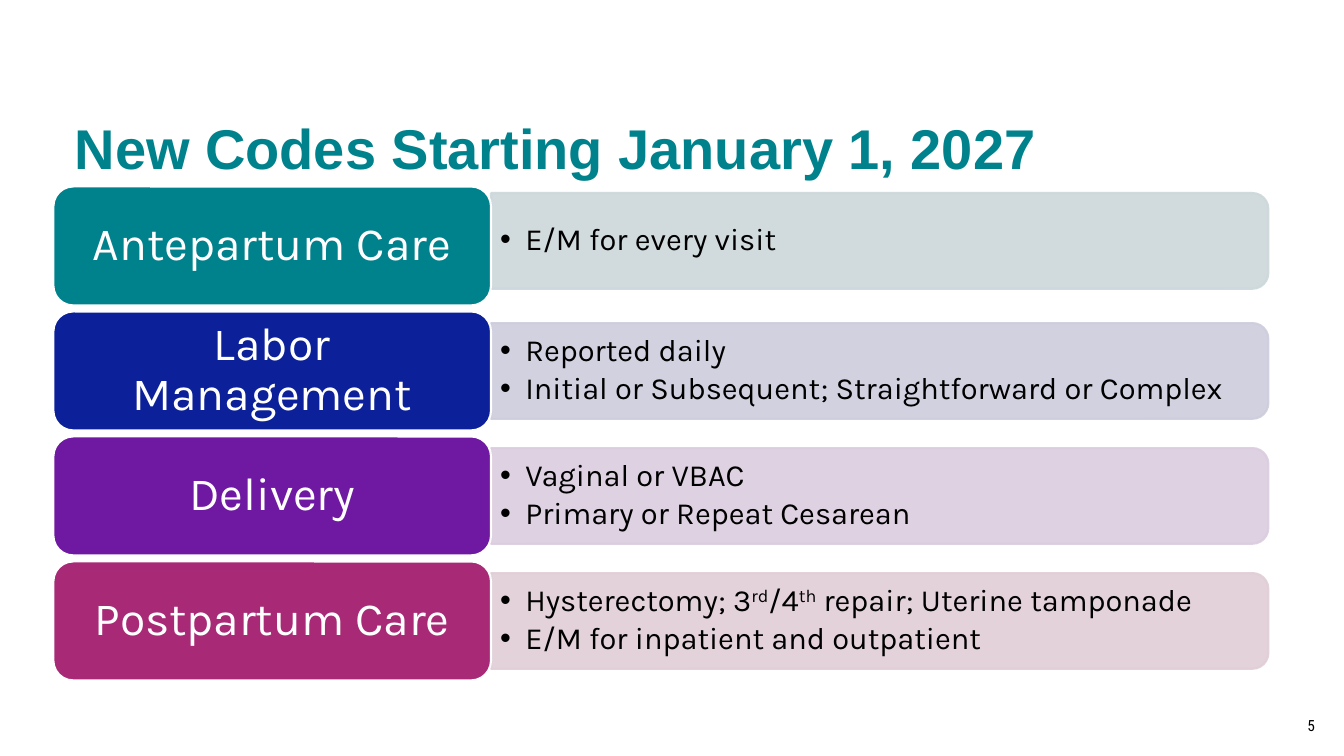
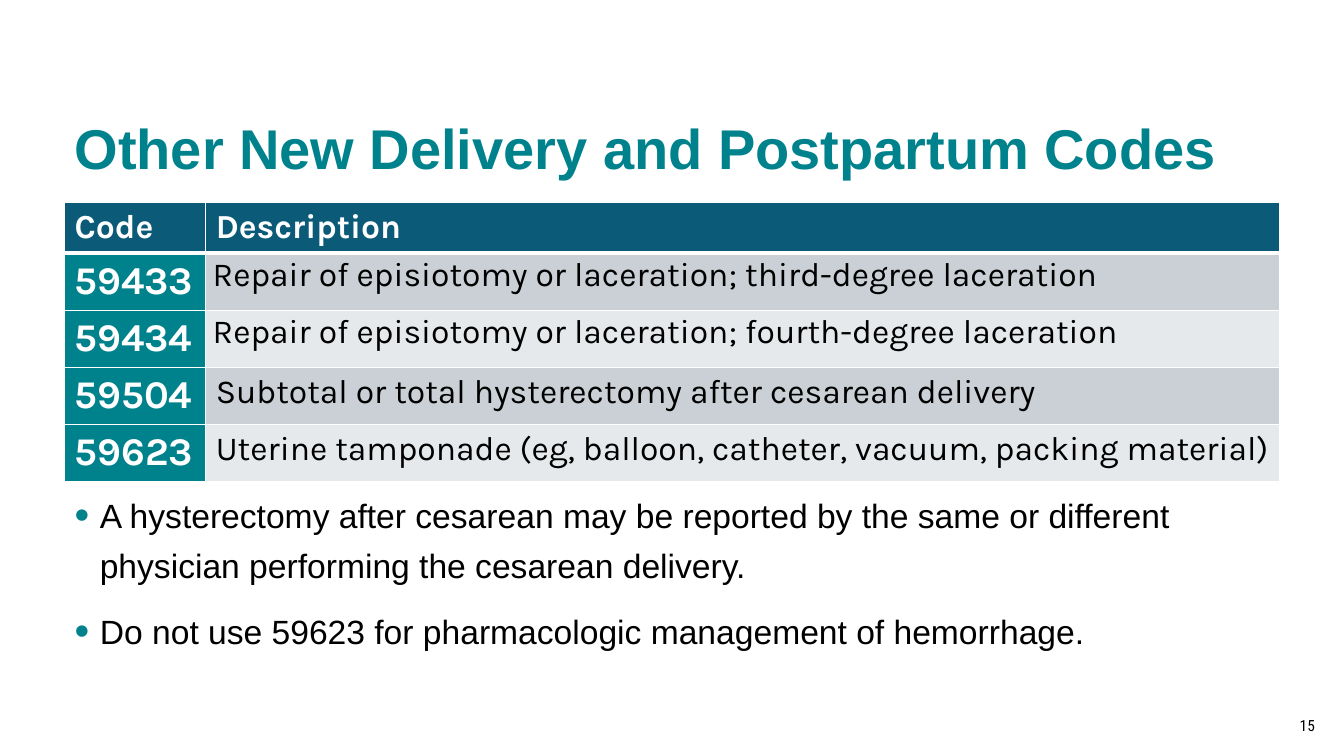
from dataclasses import dataclass

from lxml import etree
from pptx import Presentation
from pptx.dml.color import RGBColor
from pptx.enum import shapes, text
from pptx.oxml import ns
from pptx.util import Inches, Pt


@dataclass(frozen=True)
class Theme:
    teal: str = "00828D"
    navy: str = "0B5B78"
    white: str = "FFFFFF"
    black: str = "000000"
    bands: tuple = ("CAD0D5", "E6E9EB")
    heading_font: str = "Arial"
    diagram_font: str = "Karla"
    number_font: str = "Roboto Condensed"
    title_size: float = 40
    label_size: float = 33
    code_size: float = 28
    body_size: float = 24
    panel_size: float = 22
    number_size: float = 11


def add_element(parent, tag, **attributes):
    return etree.SubElement(parent, ns.qn(tag), attributes)


def set_insets(frame, horizontal, vertical):
    frame.margin_left = frame.margin_right = Inches(horizontal)
    frame.margin_top = frame.margin_bottom = Inches(vertical)


def set_font(target, name, size, color, bold=False):
    target.font.name = name
    target.font.size = Pt(size)
    target.font.bold = bold
    target.font.color.rgb = RGBColor.from_string(color)


def set_bullet(para, color=None, percent=100):
    properties = para._p.get_or_add_pPr()
    properties.set("marL", str(Inches(0.25)))
    properties.set("indent", str(-Inches(0.25)))
    if color:
        add_element(add_element(properties, "a:buClr"), "a:srgbClr", val=color)
    add_element(properties, "a:buSzPct", val=str(percent * 1000))
    add_element(properties, "a:buFont", typeface="Arial")
    add_element(properties, "a:buChar", char="•")


def set_opacity(shape, percent):
    for color in shape._element.spPr.iter(ns.qn("a:srgbClr")):
        add_element(color, "a:alpha", val=str(percent * 1000))


def set_borders(cell, color, bottom):
    properties = cell._tc.get_or_add_tcPr()
    widths = {"a:lnL": 1, "a:lnR": 1, "a:lnT": 1, "a:lnB": bottom}
    for position, (tag, width) in enumerate(widths.items()):
        line = etree.Element(ns.qn(tag), w=str(Pt(width)))
        add_element(add_element(line, "a:solidFill"), "a:srgbClr", val=color)
        properties.insert(position, line)


def write_superscripts(para, marked):
    """Write text in which carets enclose the raised parts."""
    for index, part in enumerate(marked.split("^")):
        span = para.add_run()
        span.text = part
        if index % 2:
            span._r.get_or_add_rPr().set("baseline", "30000")


class Slides:
    LEFT, WIDTH = 0.64, 12.05

    def __init__(self, theme):
        self.theme = theme
        self.deck = Presentation()
        self.deck.slide_width = Inches(13.33)
        self.deck.slide_height = Inches(7.5)
        self.page = None

    def start(self, layout, title, number):
        theme = self.theme
        self.page = self.deck.slides.add_slide(self.deck.slide_layouts.get_by_name(layout))
        frame = self.place(self.page.shapes.title, 0.5, 1.35)
        frame.vertical_anchor = text.MSO_ANCHOR.BOTTOM
        frame.text = title
        para = frame.paragraphs[0]
        para.alignment = text.PP_ALIGN.LEFT
        para.line_spacing = 0.9
        set_font(para, theme.heading_font, theme.title_size, theme.teal, True)

        frame = self.textbox(11.77, 7.05, 1.37, 0.3)
        frame.text = str(number)
        para = frame.paragraphs[0]
        para.alignment = text.PP_ALIGN.RIGHT
        set_font(para, theme.number_font, theme.number_size, theme.black)

    def place(self, holder, top, height):
        """Move a placeholder into the content column and return its text frame."""
        holder.left, holder.top = Inches(self.LEFT), Inches(top)
        holder.width, holder.height = Inches(self.WIDTH), Inches(height)
        frame = holder.text_frame
        frame.auto_size = text.MSO_AUTO_SIZE.NONE
        frame.word_wrap = True
        set_insets(frame, 0.1, 0.05)
        return frame

    def textbox(self, left, top, width, height):
        box = self.page.shapes.add_textbox(
            Inches(left), Inches(top), Inches(width), Inches(height))
        frame = box.text_frame
        frame.word_wrap = True
        frame.vertical_anchor = text.MSO_ANCHOR.MIDDLE
        return frame

    def shape(self, kind, left, top, width, height, fill, line):
        shape = self.page.shapes.add_shape(
            kind, Inches(left), Inches(top), Inches(width), Inches(height))
        shape.shadow.inherit = False
        shape.fill.solid()
        shape.fill.fore_color.rgb = RGBColor.from_string(fill)
        shape.line.color.rgb = RGBColor.from_string(line)
        shape.line.width = Pt(1.5)
        return shape

    def panel(self, middle, color, items):
        """Draw a bar rounded on its right side, with a list on it."""
        left, width, height = 4.87, 7.71, 0.95
        bar = self.shape(
            shapes.MSO_SHAPE.ROUND_2_SAME_RECTANGLE,
            left + (width - height) / 2, middle - width / 2, height, width, color, color)
        bar.rotation = 90
        set_opacity(bar, 90)
        frame = self.textbox(left, middle - 0.43, 7.67, 0.85)
        set_insets(frame, 0.09, 0.05)
        for index, item in enumerate(items):
            para = frame.add_paragraph() if index else frame.paragraphs[0]
            set_bullet(para)
            para.line_spacing = 0.9
            para.space_after = Pt(3.3)
            set_font(para, self.theme.diagram_font, self.theme.panel_size, self.theme.black)
            write_superscripts(para, item)

    def label(self, middle, color, caption):
        theme, height = self.theme, 1.18
        label = self.shape(shapes.MSO_SHAPE.ROUNDED_RECTANGLE, 0.53, middle - height / 2,
                           4.34, height, color, theme.white)
        frame = label.text_frame
        frame.word_wrap = True
        frame.vertical_anchor = text.MSO_ANCHOR.MIDDLE
        set_insets(frame, 0.2, 0.1)
        frame.text = caption
        para = frame.paragraphs[0]
        para.alignment = text.PP_ALIGN.CENTER
        para.line_spacing = 0.9
        set_font(para, theme.diagram_font, theme.label_size, theme.white)

    def cell(self, cell, words, fill, size, color, bold, bottom=1, tight=False):
        cell.fill.solid()
        cell.fill.fore_color.rgb = RGBColor.from_string(fill)
        set_borders(cell, self.theme.white, bottom)
        set_insets(cell, *((0.07, 0) if tight else (0.1, 0.05)))
        cell.text = words
        para = cell.text_frame.paragraphs[0]
        if tight:
            para.line_spacing = 1.07
        set_font(para, self.theme.diagram_font, size, color, bold)

    def code_table(self, top, header, rows):
        """Draw a table of codes; a row is code, description, tight."""
        theme = self.theme
        header_height, row_height = 0.48, 0.55
        table = self.page.shapes.add_table(
            len(rows) + 1, 2, Inches(self.LEFT), Inches(top), Inches(self.WIDTH),
            Inches(header_height + row_height * len(rows))).table
        table.horz_banding = False
        table.columns[0].width = Inches(1.4)
        table.columns[1].width = Inches(self.WIDTH - 1.4)
        table.rows[0].height = Inches(header_height)
        for column, words in enumerate(header):
            self.cell(table.cell(0, column), words, theme.navy, theme.body_size,
                      theme.white, True, bottom=3)
        for index, (code, description, tight) in enumerate(rows):
            row = index + 1
            table.rows[row].height = Inches(row_height)
            self.cell(table.cell(row, 0), code, theme.teal, theme.code_size,
                      theme.white, True)
            self.cell(table.cell(row, 1), description, theme.bands[index % 2],
                      theme.body_size, theme.black, False, tight=tight)

    def body(self, top, height, items):
        theme = self.theme
        frame = self.place(self.page.placeholders[1], top, height)
        for index, item in enumerate(items):
            para = frame.add_paragraph() if index else frame.paragraphs[0]
            para.text = item
            set_bullet(para, theme.teal, 125)
            para.line_spacing = 1.25
            para.space_before = Pt(10.8 if index else 0)
            set_font(para, theme.heading_font, theme.body_size, theme.black)


def add_care_stages(slides):
    slides.start("Title Only", "New Codes Starting January 1, 2027", 5)
    # Caption, label colour, panel colour, panel lift, list
    stages = [
        ("Antepartum Care", "00828D", "CCD8DB", 0.05, ["E/M for every visit"]),
        ("Labor Management", "0B2099", "CDCDDD", 0,
         ["Reported daily", "Initial or Subsequent; Straightforward or Complex"]),
        ("Delivery", "6F18A2", "DBCDDF", 0,
         ["Vaginal or VBAC", "Primary or Repeat Cesarean"]),
        ("Postpartum Care", "A82975", "E1CED6", 0,
         ["Hysterectomy; 3^rd^/4^th^ repair; Uterine tamponade",
          "E/M for inpatient and outpatient"]),
    ]
    first_middle, step = 2.44, 1.24
    for index, (caption, color, tint, lift, items) in enumerate(stages):
        middle = first_middle + index * step
        slides.panel(middle - lift, tint, items)
        slides.label(middle, color, caption)


def add_other_codes(slides):
    slides.start("Title and Content", "Other New Delivery and Postpartum Codes", 15)
    slides.code_table(2.01, ("Code", "Description"), [
        ("59433", "Repair of episiotomy or laceration; third-degree laceration", True),
        ("59434", "Repair of episiotomy or laceration; fourth-degree laceration", True),
        ("59504", "Subtotal or total hysterectomy after cesarean delivery", False),
        ("59623", "Uterine tamponade (eg, balloon, catheter, vacuum, packing material)",
         False),
    ])
    slides.body(4.76, 2.03, [
        "A hysterectomy after cesarean may be reported by the same or different "
        "physician performing the cesarean delivery.",
        "Do not use 59623 for pharmacologic management of hemorrhage.",
    ])


def main():
    slides = Slides(Theme())
    add_care_stages(slides)
    add_other_codes(slides)
    slides.deck.save("out.pptx")


if __name__ == "__main__":
    main()
